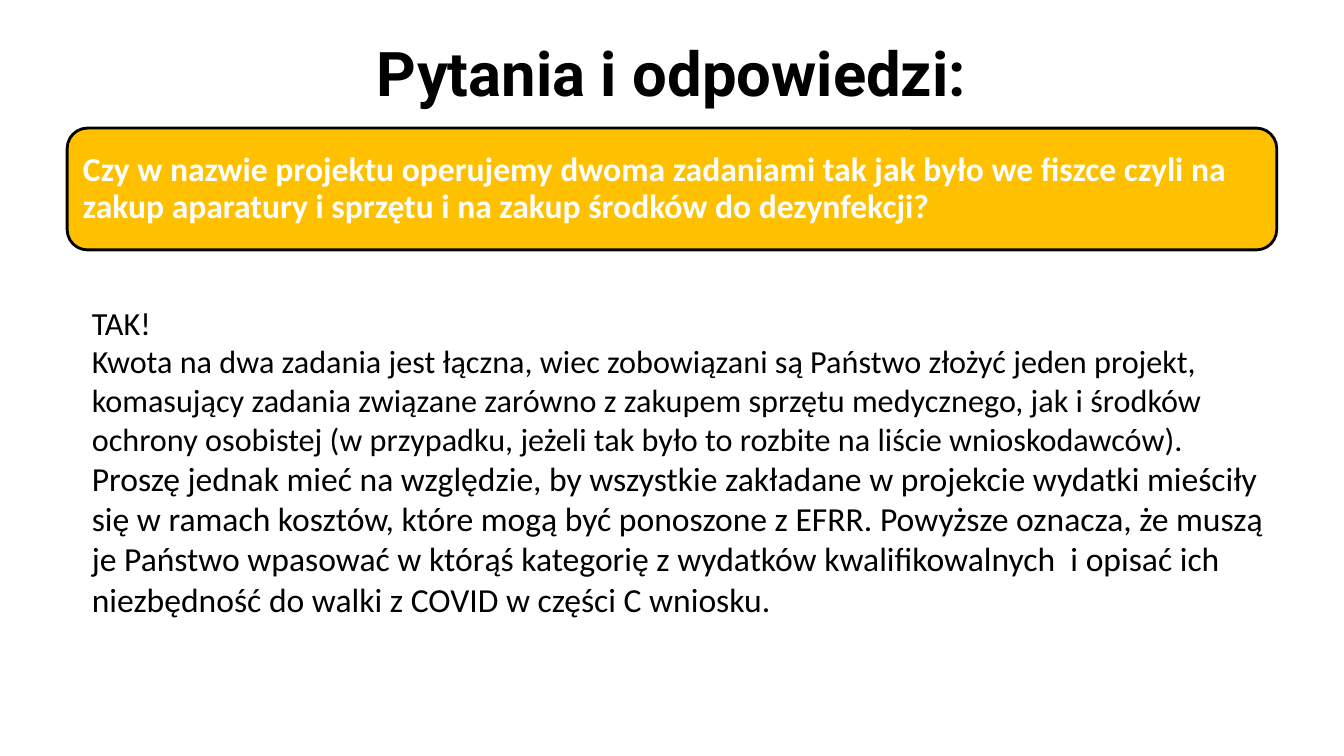
from pptx import Presentation
from pptx.dml.color import RGBColor
from pptx.enum import shapes, text
from pptx.util import Pt

BLACK = RGBColor(0x00, 0x00, 0x00)
WHITE = RGBColor(0xFF, 0xFF, 0xFF)
AMBER = RGBColor(0xFF, 0xC0, 0x00)

TITLE = "Pytania i odpowiedzi:"
QUESTION = (
    "Czy w nazwie projektu operujemy dwoma zadaniami tak jak było we fiszce czyli na "
    "zakup aparatury i sprzętu i na zakup środków do dezynfekcji?"
)
ANSWER = [
    ("TAK!", 23),
    ("Kwota na dwa zadania jest łączna, wiec zobowiązani są Państwo złożyć jeden projekt, "
     "komasujący zadania związane zarówno z zakupem sprzętu medycznego, jak i środków "
     "ochrony osobistej (w przypadku, jeżeli tak było to rozbite na liście wnioskodawców).", 23),
    ("Proszę jednak mieć na względzie, by wszystkie zakładane w projekcie wydatki mieściły "
     "się w ramach kosztów, które mogą być ponoszone z EFRR. Powyższe oznacza, że muszą "
     "je Państwo wpasować w którąś kategorię z wydatków kwalifikowalnych  i opisać ich "
     "niezbędność do walki z COVID w części C wniosku.", 24),
]


def style(paragraph, font_name, size, color, bold=False):
    font = paragraph.font
    font.name, font.size, font.bold = font_name, Pt(size), bold
    font.color.rgb = color


presentation = Presentation()
presentation.slide_width, presentation.slide_height = Pt(960), Pt(540)
slide = presentation.slides.add_slide(presentation.slide_layouts[6])

# Title
title = slide.shapes.add_textbox(Pt(48), Pt(21.6), Pt(864), Pt(90))
title.text_frame.word_wrap = True
paragraph = title.text_frame.paragraphs[0]
paragraph.text = TITLE
paragraph.alignment = text.PP_ALIGN.CENTER
style(paragraph, "Roboto", 44, BLACK, bold=True)

# Question
question = slide.shapes.add_shape(
    shapes.MSO_SHAPE.ROUNDED_RECTANGLE, Pt(48), Pt(91.5), Pt(864), Pt(87))
question.shadow.inherit = False
question.fill.solid()
question.fill.fore_color.rgb = AMBER
question.line.color.rgb = BLACK
question.line.width = Pt(2)
frame = question.text_frame
frame.word_wrap = True
frame.vertical_anchor = text.MSO_ANCHOR.MIDDLE
# The rounded corners add about 4 pt to these margins
frame.margin_left = frame.margin_right = Pt(7.2)
paragraph = frame.paragraphs[0]
paragraph.text = QUESTION
paragraph.alignment = text.PP_ALIGN.LEFT
paragraph.line_spacing = 0.9
style(paragraph, "Calibri", 24, WHITE, bold=True)

# Answer
answer = slide.shapes.add_textbox(Pt(58.5), Pt(213), Pt(864), Pt(235))
frame = answer.text_frame
frame.word_wrap = True
for index, (wording, size) in enumerate(ANSWER):
    paragraph = frame.add_paragraph() if index else frame.paragraphs[0]
    paragraph.text = wording
    style(paragraph, "Calibri", size, BLACK)

presentation.save("out.pptx")
